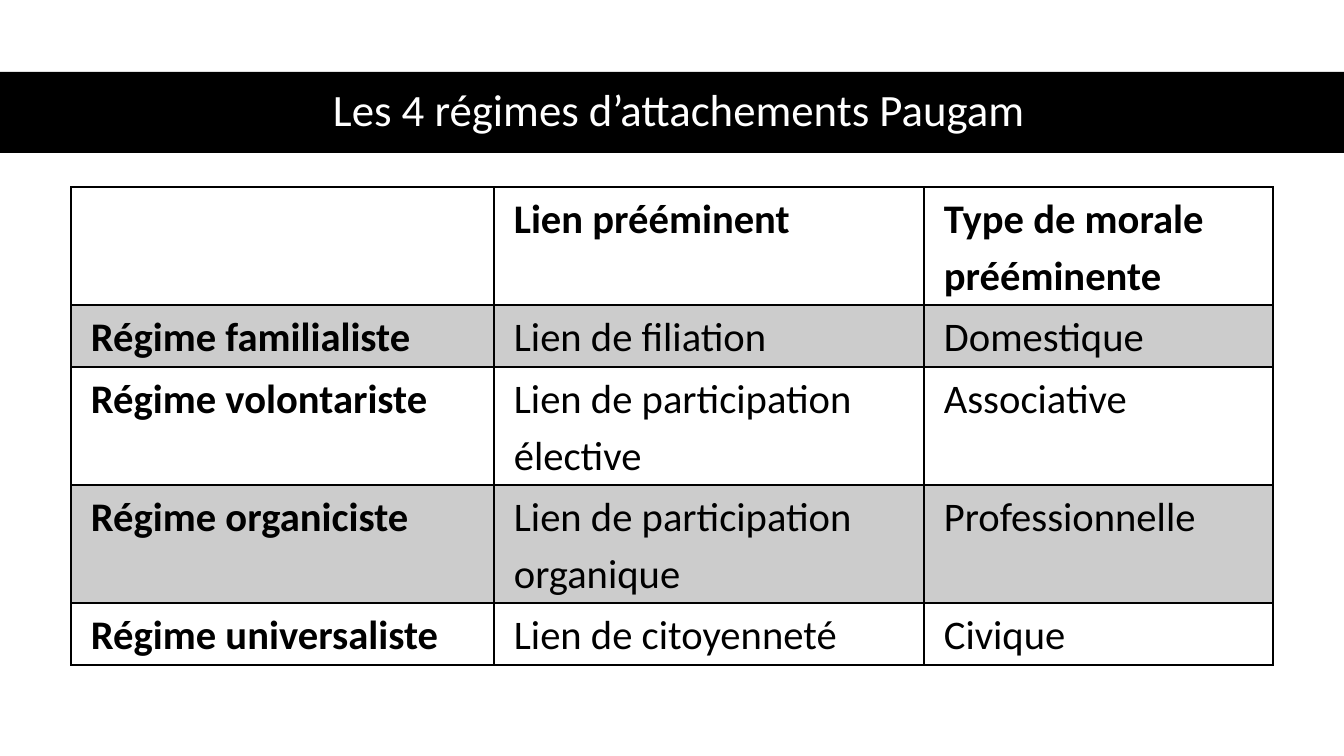
import pptx
import pptx.util
import pptx.dml.color
import pptx.enum.shapes
import pptx.enum.text
import pptx.oxml
import pptx.oxml.ns

SCALE = 914400 / 100.8
BLACK, WHITE = "000000", "FFFFFF"
COLS = [423, 430, 349]
ROWS = [118, 62, 118, 118, 62]
CELLS = [
    ["", "Lien prééminent", "Type de morale prééminente"],
    ["Régime familialiste", "Lien de filiation", "Domestique"],
    ["Régime volontariste", "Lien de participation élective", "Associative"],
    ["Régime organiciste", "Lien de participation organique", "Professionnelle"],
    ["Régime universaliste", "Lien de citoyenneté", "Civique"],
]


def px(n):
    """Turn pixels into EMU."""
    return pptx.util.Emu(round(n * SCALE))


def tint(hue):
    """Turn a hex string into a colour."""
    return pptx.dml.color.RGBColor.from_string(hue)


def write(para, text, size, hue, bold=False):
    """Add one styled run to a paragraph."""
    run = para.add_run()
    run.text = text
    run.font.name = "Calibri"
    run.font.size = pptx.util.Pt(size)
    run.font.bold = bold
    run.font.color.rgb = tint(hue)


def add_band(slide, x, y, w, h):
    """Draw the black band behind the title."""
    band = slide.shapes.add_shape(
        pptx.enum.shapes.MSO_SHAPE.RECTANGLE, px(x), px(y), px(w), px(h))
    band.shadow.inherit = False
    band.fill.solid()
    band.fill.fore_color.rgb = tint(BLACK)
    band.line.fill.background()


def add_title(slide, text, x, y, w, h):
    """Place the centred title."""
    frame = slide.shapes.add_textbox(px(x), px(y), px(w), px(h)).text_frame
    frame.word_wrap = True
    frame.vertical_anchor = pptx.enum.text.MSO_ANCHOR.MIDDLE
    para = frame.paragraphs[0]
    para.alignment = pptx.enum.text.PP_ALIGN.CENTER
    para.line_spacing = 0.9
    write(para, text, 32, WHITE)


def edge(cell):
    """Give a cell thin black borders."""
    props = cell._tc.get_or_add_tcPr()
    for side in "LRTB":
        props.append(pptx.oxml.parse_xml(
            f'<a:ln{side} {pptx.oxml.ns.nsdecls("a")} w="12700"><a:solidFill>'
            f'<a:srgbClr val="{BLACK}"/></a:solidFill></a:ln{side}>'))


def shade(cell, dark):
    """Fill a cell with 20 % black, or leave it clear."""
    if not dark:
        cell.fill.background()
        return
    cell.fill.solid()
    cell.fill.fore_color.rgb = tint(BLACK)
    hue = cell._tc.tcPr.find(pptx.oxml.ns.qn("a:solidFill"))[0]
    hue.append(pptx.oxml.parse_xml(
        f'<a:alpha {pptx.oxml.ns.nsdecls("a")} val="20000"/>'))


def add_grid(slide, x, y):
    """Build the table of regimes."""
    grid = slide.shapes.add_table(
        len(ROWS), len(COLS), px(x), px(y), px(sum(COLS)), px(sum(ROWS))).table
    grid.first_row = grid.horz_banding = False
    for col, width in zip(grid.columns, COLS):
        col.width = px(width)
    for r, (row, height) in enumerate(zip(grid.rows, ROWS)):
        row.height = px(height)
        for c, cell in enumerate(row.cells):
            cell.margin_left = cell.margin_right = px(20)
            cell.margin_top = cell.margin_bottom = 0
            edge(cell)
            shade(cell, r % 2 == 1)
            if CELLS[r][c]:
                para = cell.text_frame.paragraphs[0]
                para.line_spacing = 1.15
                write(para, CELLS[r][c], 29, BLACK, r == 0 or c == 0)


def main():
    """Build and save the slide."""
    deck = pptx.Presentation()
    deck.slide_width, deck.slide_height = px(1344), px(756)
    slide = deck.slides.add_slide(deck.slide_layouts[6])
    add_band(slide, 0, 72, 1344, 81)
    add_title(slide, "Les 4 régimes d’attachements Paugam", 61, 71, 1236, 81)
    add_grid(slide, 71, 187)
    deck.save("out.pptx")


if __name__ == "__main__":
    main()
